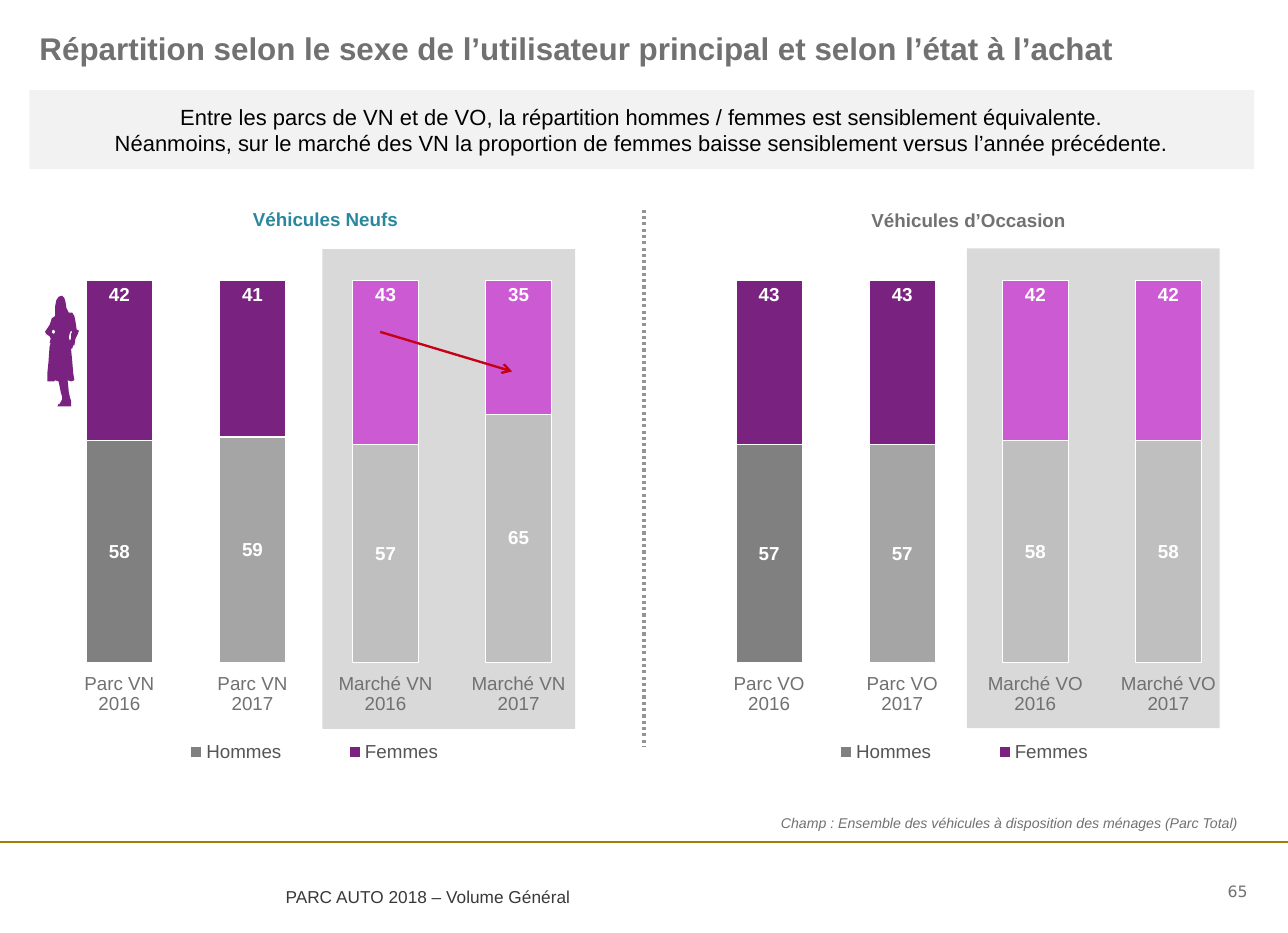
from lxml.etree import SubElement
from pptx import Presentation
from pptx.chart.data import CategoryChartData
from pptx.dml.color import RGBColor
from pptx.enum.chart import (XL_CHART_TYPE, XL_LABEL_POSITION as LABEL_POS,
                             XL_LEGEND_POSITION, XL_TICK_LABEL_POSITION,
                             XL_TICK_MARK)
from pptx.enum.dml import MSO_LINE
from pptx.enum.shapes import MSO_CONNECTOR, MSO_SHAPE
from pptx.enum.text import MSO_ANCHOR as ANCHOR, PP_ALIGN as ALIGN
from pptx.oxml import parse_xml
from pptx.oxml.ns import nsdecls, qn
from pptx.util import Cm, Pt

GREY, TEAL, PURPLE, PINK = "717171", "2A889E", "7A2280", "CB5AD3"
MEN_COLORS = ["808080", "A5A5A5", "BFBFBF", "BFBFBF"]
WOMEN_COLORS = [PURPLE, PURPLE, PINK, PINK]

# Outlines in hundredths of an inch: body, then the gaps inside both arms
WOMAN = [
    [(49, 276), (49, 271), (50, 266), (52, 263), (55, 262), (57, 264), (58, 267),
     (59, 273), (61, 277), (64, 277), (66, 280), (67, 285), (68, 292), (69.5, 293),
     (69, 296), (67, 300), (66, 306), (65, 306), (64, 309), (63, 309), (64, 319),
     (65, 331), (66, 337), (63, 338), (60, 337), (61, 347), (62, 352), (63, 355),
     (63, 360), (56, 360), (51, 359.5), (52, 358), (53, 358), (55, 354), (55, 351),
     (54, 348), (52, 338), (49, 337), (48, 338), (42, 337.5), (42, 331), (43, 321),
     (44, 307), (45, 304), (44, 304), (45, 300), (44, 298), (41, 296), (40.5, 294),
     (42, 291), (44, 288), (45, 285), (46, 282), (49, 280)],
    [(63, 293), (64, 294), (63, 296), (63, 300), (62, 302), (61, 299), (62, 295)],
    [(48, 296), (46, 295), (46, 293), (48, 292), (49, 294)],
]


def rgb(color):
    return RGBColor.from_string(color)


def manual_layout(x, y, w, h, inner=False):
    """Return a c:layout element placed by fractions of the chart."""
    target = '<c:layoutTarget val="inner"/>' if inner else ""
    sizes = "".join(f'<c:{tag} val="{value}"/>'
                    for tag, value in zip("xywh", (x, y, w, h)))
    return parse_xml(
        f'<c:layout {nsdecls("c")}><c:manualLayout>{target}'
        f'<c:xMode val="edge"/><c:yMode val="edge"/>{sizes}'
        '</c:manualLayout></c:layout>')


class SlideBuilder:
    def __init__(self, prs, font="Arial"):
        self.font = font
        self.slide = prs.slides.add_slide(prs.slide_layouts[6])
        self.shapes = self.slide.shapes

    def style(self, font, size, color, bold=None, italic=None, name=None):
        font.name, font.size = name or self.font, Pt(size)
        font.bold, font.italic = bold, italic
        font.color.rgb = rgb(color)

    def paint(self, sp, fill):
        sp.shadow.inherit = False
        sp.fill.solid()
        sp.fill.fore_color.rgb = rgb(fill)
        sp.line.fill.background()

    def fill_text(self, sp, lines, size, color, align=ALIGN.LEFT, anchor=ANCHOR.TOP,
                  insets=(0, 0, 0, 0), **look):
        tf = sp.text_frame
        tf.word_wrap = True
        tf.vertical_anchor = anchor
        (tf.margin_left, tf.margin_top,
         tf.margin_right, tf.margin_bottom) = map(Cm, insets)
        for i, line in enumerate(lines):
            p = tf.add_paragraph() if i else tf.paragraphs[0]
            p.text, p.alignment = line, align
            self.style(p.font, size, color, **look)

    def text(self, box, line, size, color, **look):
        self.fill_text(self.shapes.add_textbox(*map(Cm, box)), [line], size, color,
                       **look)

    def rect(self, box, fill):
        sp = self.shapes.add_shape(MSO_SHAPE.RECTANGLE, *map(Cm, box))
        self.paint(sp, fill)
        return sp

    def outline(self, contours, fill):
        first, *gaps = contours
        builder = self.shapes.build_freeform(*first[0], scale=Cm(0.0254))
        builder.add_line_segments(first[1:])
        for gap in gaps:
            builder.move_to(*gap[0])
            builder.add_line_segments(gap[1:])
        self.paint(builder.convert_to_shape(), fill)

    def line(self, ends, color, width, dash=None, arrow=False):
        cn = self.shapes.add_connector(MSO_CONNECTOR.STRAIGHT, *map(Cm, ends))
        cn.line.color.rgb = rgb(color)
        cn.line.width = Pt(width)
        if dash:
            cn.line.dash_style = dash
        props = cn._element.spPr
        if arrow:
            SubElement(props.find(qn("a:ln")), qn("a:tailEnd"), type="arrow")
        SubElement(props, qn("a:effectLst"))

    def stacked_chart(self, box, categories, men, women):
        data = CategoryChartData()
        data.categories = categories
        data.add_series("Hommes", men)
        data.add_series("Femmes", women)
        chart = self.shapes.add_chart(
            XL_CHART_TYPE.COLUMN_STACKED, *map(Cm, box), data).chart
        chart.has_title = False
        self.style(chart.font, 12, GREY)

        plot = chart.plots[0]
        plot.gap_width, plot.overlap, plot.vary_by_categories = 101, 100, False
        self.color_series(plot.series[0], MEN_COLORS, LABEL_POS.CENTER)
        self.color_series(plot.series[1], WOMEN_COLORS, LABEL_POS.INSIDE_END)

        values, cats = chart.value_axis, chart.category_axis
        values.minimum_scale, values.maximum_scale = 0, 110
        values.has_major_gridlines = values.visible = False
        cats.major_tick_mark = XL_TICK_MARK.OUTSIDE
        cats.tick_label_position = XL_TICK_LABEL_POSITION.LOW
        cats.format.line.fill.background()
        self.style(cats.tick_labels.font, 12, GREY)

        chart.has_legend = True
        chart.legend.position = XL_LEGEND_POSITION.TOP
        chart.legend.include_in_layout = False
        self.style(chart.legend.font, 12, "555555")
        self.arrange(chart.element)

    def color_series(self, series, colors, position):
        points = [series.points[i] for i in range(len(colors))]
        for part, color in zip([series] + points, colors[:1] + colors):
            part.format.fill.solid()
            part.format.fill.fore_color.rgb = rgb(color)
            part.format.line.color.rgb = rgb("FFFFFF")
            part.format.line.width = Pt(0.75)
        labels = series.data_labels
        labels.show_value = True
        labels.position = position
        labels.number_format, labels.number_format_is_linked = "#,##0", False
        self.style(labels.font, 12, "FFFFFF", bold=True)

    def arrange(self, space):
        """Place plot and legend, and make the chart background clear."""
        chart = space.find(qn("c:chart"))
        chart.addnext(parse_xml(
            f'<c:spPr {nsdecls("c", "a")}><a:noFill/><a:ln><a:noFill/></a:ln></c:spPr>'))
        area, legend = chart.find(qn("c:plotArea")), chart.find(qn("c:legend"))
        for parent in (area, legend):
            for old in parent.findall(qn("c:layout")):
                parent.remove(old)
        area.insert(0, manual_layout(0, 0.075, 0.977, 0.689, inner=True))
        legend.find(qn("c:legendPos")).addnext(manual_layout(0.14, 0.88, 0.68, 0.06))


def main():
    prs = Presentation()
    prs.slide_width, prs.slide_height = Cm(29), Cm(21)
    s = SlideBuilder(prs)

    s.line((0, 18.95, 29, 18.95), "A67C00", 1.5)
    s.text((6.43, 19.94, 8.18, 0.61), "PARC AUTO 2018 – Volume Général", 11, "383838")
    s.rect((21.77, 5.59, 5.69, 10.8), "D9D9D9")
    s.rect((7.26, 5.61, 5.69, 10.8), "D9D9D9")
    s.text((0.89, 0, 27.2, 1.52),
           "Répartition selon le sexe de l’utilisateur principal et selon l’état à l’achat",
           20, GREY, bold=True, insets=(0, 0.66, 0, 0))
    s.text((10.39, 18.24, 17.7, 0.61),
           "Champ : Ensemble des véhicules à disposition des ménages (Parc Total)",
           9, GREY, italic=True, align=ALIGN.RIGHT, insets=(0.23, 0.1, 0.23, 0.1))
    s.outline(WOMAN, PURPLE)
    s.line((14.5, 4.72, 14.5, 16.81), "949494", 2, dash=MSO_LINE.ROUND_DOT)
    s.text((3.43, 4.67, 7.8, 0.51), "Véhicules Neufs", 12, TEAL,
           bold=True, align=ALIGN.CENTER)
    s.text((17.91, 4.7, 7.8, 0.51), "Véhicules d’Occasion", 12, GREY,
           bold=True, align=ALIGN.CENTER)
    s.fill_text(s.rect((0.66, 2.03, 27.58, 1.78), "F2F2F2"), [
        "Entre les parcs de VN et de VO, la répartition hommes / femmes est "
        "sensiblement équivalente.",
        "Néanmoins, sur le marché des VN la proportion de femmes baisse "
        "sensiblement versus l’année précédente.",
    ], 14, "000000", align=ALIGN.CENTER, anchor=ANCHOR.MIDDLE,
        insets=(0.23, 0.1, 0.23, 0.1))

    for left, kind, men, women in (
            (15.82, "VO", (57, 57, 58, 58), (43, 43, 42, 42)),
            (1.19, "VN", (58, 59, 57, 65), (42, 41, 43, 35))):
        categories = [f"{group} {kind}{gap}{year}"
                      for group, gap in (("Parc", "\n"), ("Marché", " "))
                      for year in (2016, 2017)]
        s.stacked_chart((left, 4.42, 12.27, 13.74), categories, men, women)

    s.line((8.56, 7.47, 11.53, 8.36), "C50017", 1.5, arrow=True)
    s.text((26.06, 19.81, 2.03, 0.51), "65", 10, GREY, name="DejaVu Sans",
           align=ALIGN.RIGHT, anchor=ANCHOR.MIDDLE)
    prs.save("out.pptx")


if __name__ == "__main__":
    main()
